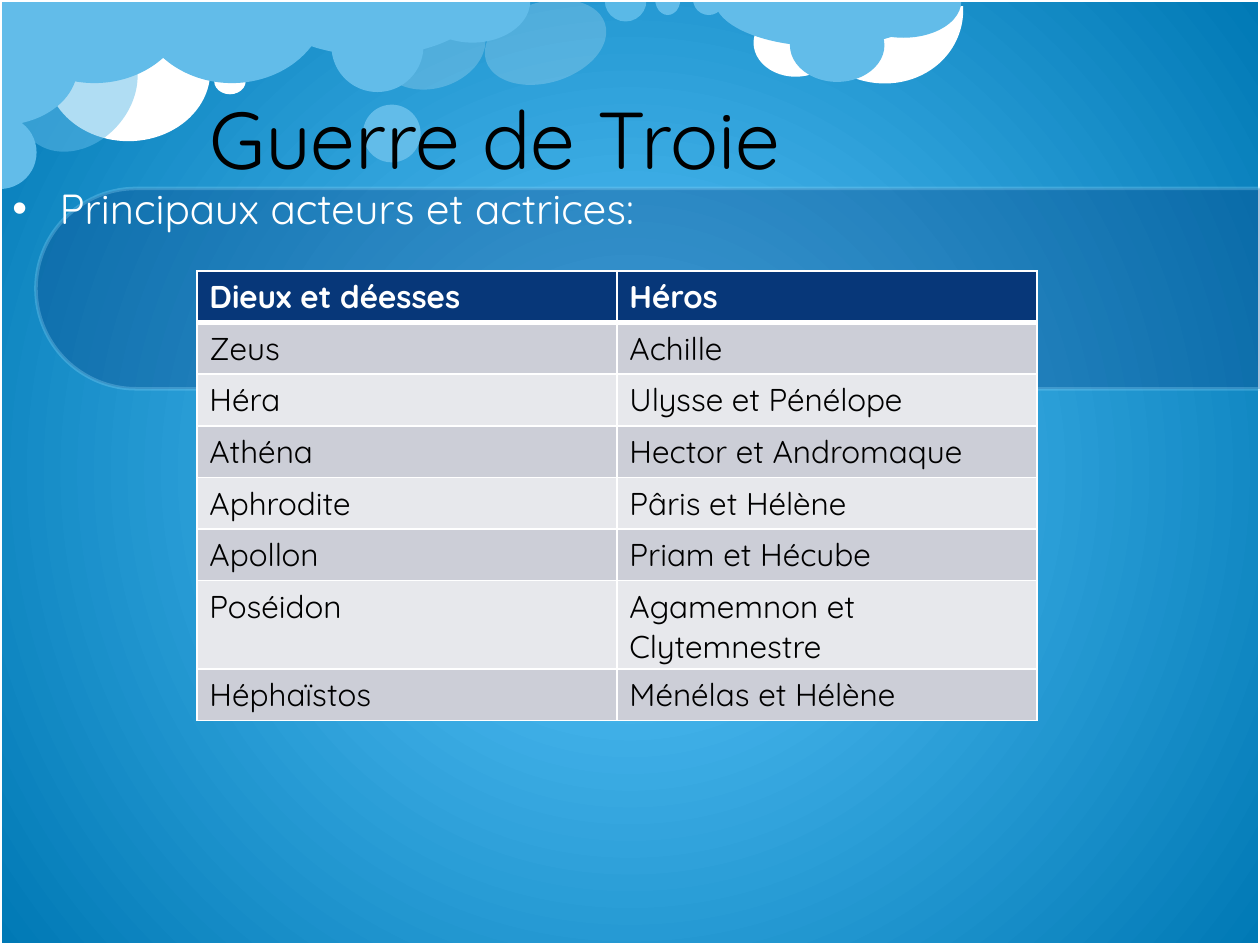
from pptx import Presentation
from pptx import util as u
from pptx.dml import color
from pptx.enum import shapes, text
from pptx.oxml import ns, xmlchemy

TITLE = "Guerre de Troie"
INTRO = "Principaux acteurs et actrices:"
ROWS = [
    ("Dieux et déesses", "Héros"),
    ("Zeus", "Achille"),
    ("Héra", "Ulysse et Pénélope"),
    ("Athéna", "Hector et Andromaque"),
    ("Aphrodite", "Pâris et Hélène"),
    ("Apollon", "Priam et Hécube"),
    ("Poséidon", "Agamemnon et Clytemnestre"),
    ("Héphaïstos", "Ménélas et Hélène"),
]
THEME = {
    "font": "Quicksand", "title": 46, "intro": 24, "cell": 18,
    "white": "FFFFFF", "black": "000000", "navy": "073779",
    "cloud": "62BCE9", "pale": "8FD9FB", "glow": "5DC9FF", "sky": "0079B5",
    "bands": ("CCCED7", "E7E8EC"),
}
KINDS = {
    "ellipse": (shapes.MSO_SHAPE.OVAL, ()),
    "half": (shapes.MSO_SHAPE.PIE, (0, 180)),
    "arc": (shapes.MSO_SHAPE.ARC, (253, 74.13)),
}
CLOUDS = [
    ("ellipse", (224, -3.6, 46, 62), 72.8, "white", 20),
    ("ellipse", (26.6, 0.7, 93.6, 80), 0, "white", 100),
    ("arc", (460, -43.2, 87, 94.3), 106.5, "white", 100),
    ("ellipse", (430.6, 5, 48.2, 38.9), 0, "white", 100),
    ("half", (-0.7, -47.5, 109.4, 95), 0, "cloud", 100),
    ("half", (149.8, -31.7, 126, 63.4), 0, "cloud", 100),
    ("ellipse", (207.4, 59.8, 33, 33), 0, "cloud", 100),
    ("ellipse", (13.7, 13, 61.2, 77), 41.8, "cloud", 50),
    ("half", (-20.9, 66.2, 41.8, 41.8), 270, "cloud", 100),
    ("ellipse", (122.4, 38.9, 18, 15), 0, "white", 100),
    ("half", (77.8, -47.5, 109.4, 95), 0, "cloud", 100),
    ("half", (408.2, -27.4, 126, 54), 0, "cloud", 100),
    ("ellipse", (451.4, 5, 54, 41.8), 0, "cloud", 100),
    ("half", (483.1, -20.2, 66.2, 41.8), 0, "cloud", 100),
    ("ellipse", (288.7, -11.5, 46, 71.3), 72.8, "white", 20),
    ("half", (345.6, -11.5, 23.8, 23.8), 0, "pale", 50),
    ("half", (374.4, -9.4, 14.4, 18), 0, "cloud", 100),
    ("half", (396, -9.4, 18, 18), 0, "cloud", 100),
    ("ellipse", (189.4, 0, 52.6, 52.6), 0, "cloud", 100),
    ("half", (236.9, -23.8, 66.2, 48.2), 0, "cloud", 100),
    ("half", (-33.8, -6.5, 67, 89.3), 270, "cloud", 100),
]
WIDTH, HEIGHT = 720, 540
TABLE_LEFT, TABLE_TOP, COLUMN_WIDTH, ROW_HEIGHT = 112.5, 154.8, 240, 29.52


def points(values):
    return [u.Pt(value) for value in values]


def rgb(name):
    return color.RGBColor.from_string(THEME.get(name, name))


def add_xml(parent, tag, **attributes):
    element = xmlchemy.OxmlElement(tag)
    for name, value in attributes.items():
        element.set(name, str(value))
    parent.append(element)
    return element


def paint(fill, name, opacity=100):
    fill.solid()
    fill.fore_color.rgb = rgb(name)
    if opacity < 100:
        node = fill._xPr.find(".//" + ns.qn("a:srgbClr"))
        add_xml(node, "a:alpha", val=opacity * 1000)


def outline(shape, name, width, opacity=100):
    shape.line.width = u.Pt(width)
    paint(shape.line.fill, name, opacity)


def add_shape(slide, kind, box, rotation=0):
    shape = slide.shapes.add_shape(kind, *points(box))
    shape.shadow.inherit = False
    shape.rotation = rotation
    return shape


def write(paragraph, content, size, name, bold=False):
    paragraph.text = content
    formats = {"name": THEME["font"], "size": u.Pt(THEME[size]), "bold": bold}
    for run in paragraph.runs:
        for key, value in formats.items():
            setattr(run.font, key, value)
        run.font.color.rgb = rgb(name)


def add_text(slide, box, anchor):
    frame = slide.shapes.add_textbox(*points(box)).text_frame
    frame.word_wrap = True
    frame.vertical_anchor = anchor
    return frame.paragraphs[0]


def add_background(slide):
    fill = slide.background.fill
    fill.gradient()
    for stop, name in zip(fill.gradient_stops, ("glow", "sky")):
        stop.color.rgb = rgb(name)
    gradient = fill._xPr.find(ns.qn("a:gradFill"))
    gradient.remove(gradient.find(ns.qn("a:lin")))
    circle = add_xml(gradient, "a:path", path="circle")
    add_xml(circle, "a:fillToRect", l=50000, t=50000, r=50000, b=50000)


def add_scenery(slide):
    for kind, box, rotation, name, opacity in CLOUDS:
        preset, angles = KINDS[kind]
        shape = add_shape(slide, preset, box, rotation)
        for index, angle in enumerate(angles):
            shape.adjustments[index] = angle * 0.6
        paint(shape.fill, name, opacity)
        shape.line.fill.background()
    frame = add_shape(slide, shapes.MSO_SHAPE.RECTANGLE, (0, 0, WIDTH, HEIGHT))
    frame.fill.background()
    outline(frame, "white", 2)
    band = add_shape(slide, shapes.MSO_SHAPE.ROUND_2_SAME_RECTANGLE,
                     (313.2, -185, 114.5, 699.8), 270)
    band.adjustments[0], band.adjustments[1] = 0.5, 0
    paint(band.fill, "navy", 30)
    outline(band, "pale", 2, 30)


def add_borders(cell, widths):
    properties = cell._tc.get_or_add_tcPr()
    for side, width in widths.items():
        line = add_xml(properties, f"a:ln{side}", w=u.Pt(width))
        add_xml(add_xml(line, "a:solidFill"), "a:srgbClr", val=THEME["white"])


def add_table(slide):
    columns = len(ROWS[0])
    box = (TABLE_LEFT, TABLE_TOP, COLUMN_WIDTH * columns, ROW_HEIGHT * len(ROWS))
    table = slide.shapes.add_table(len(ROWS), columns, *points(box)).table
    for row, values in enumerate(ROWS):
        header = row == 0
        widths = {"L": 1, "R": 1, "T": 3 if row == 1 else 1, "B": 3 if header else 1}
        for column, value in enumerate(values):
            cell = table.cell(row, column)
            add_borders(cell, widths)
            paint(cell.fill, "navy" if header else THEME["bands"][(row - 1) % 2])
            write(cell.text_frame.paragraphs[0], value, "cell",
                  "white" if header else "black", header)


def main():
    """Build the slide on the Trojan War and its gods and heroes."""
    presentation = Presentation()
    presentation.slide_width, presentation.slide_height = points((WIDTH, HEIGHT))
    slide = presentation.slides.add_slide(presentation.slide_layouts[6])
    add_background(slide)
    add_scenery(slide)
    title = add_text(slide, (112.5, 20.9, 607.5, 113.8), text.MSO_ANCHOR.MIDDLE)
    title.line_spacing = u.Pt(56)
    write(title, TITLE, "title", "black")
    intro = add_text(slide, (0, 100.8, WIDTH, 439.2), text.MSO_ANCHOR.TOP)
    properties = intro._p.get_or_add_pPr()
    properties.set("marL", str(u.Pt(27)))
    properties.set("indent", str(u.Pt(-27)))
    add_xml(properties, "a:buFont", typeface="Arial")
    add_xml(properties, "a:buChar", char="•")
    intro.space_after = u.Pt(20)
    write(intro, INTRO, "intro", "white")
    add_table(slide)
    presentation.save("out.pptx")


if __name__ == "__main__":
    main()
